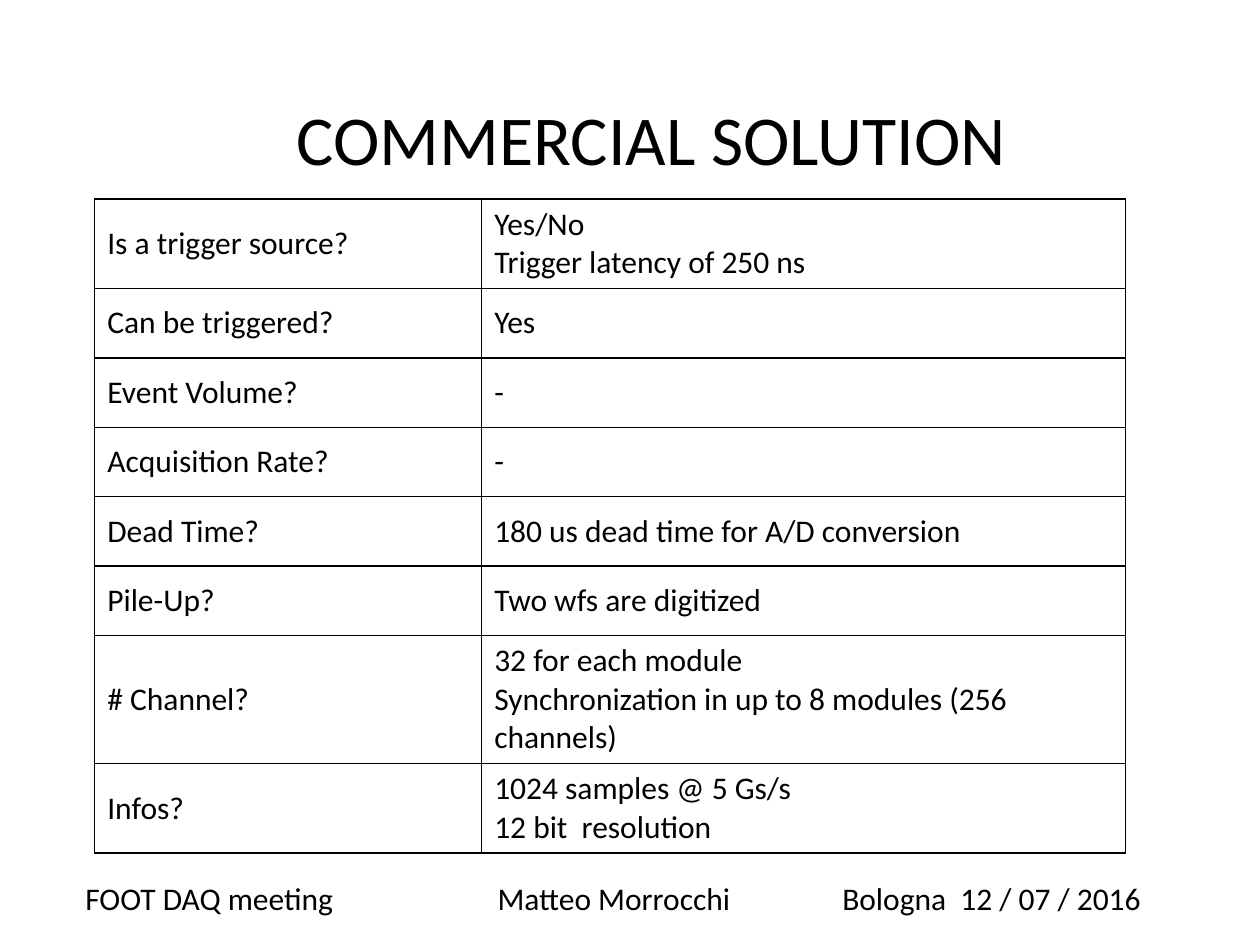
from lxml import etree
from pptx import Presentation
from pptx import util as u
from pptx.dml.color import RGBColor
from pptx.enum import text
from pptx.oxml import ns

TITLE = "COMMERCIAL SOLUTION"
ROWS = [
    ("Is a trigger source?", ["Yes/No", "Trigger latency of 250 ns"]),
    ("Can be triggered?", ["Yes"]),
    ("Event Volume?", ["-"]),
    ("Acquisition Rate?", ["-"]),
    ("Dead Time?", ["180 us dead time for A/D conversion"]),
    ("Pile-Up?", ["Two wfs are digitized"]),
    ("# Channel?", ["32 for each module",
                    "Synchronization in up to 8 modules (256 channels)"]),
    ("Infos?", ["1024 samples @ 5 Gs/s", "12 bit  resolution"]),
]
FOOTER = ["FOOT DAQ meeting", "Matteo Morrocchi", "Bologna  12 / 07 / 2016"]
FOOTER_TABS = [8.31, 15.26]
COLUMNS = [7.8, 12.98]
ROW_HEIGHT = 1.4
BLACK = RGBColor(0, 0, 0)


def write(tf, lines, size=18, align=text.PP_ALIGN.LEFT):
    tf.word_wrap = True
    tf.text = "\n".join(lines)
    for p in tf.paragraphs:
        p.alignment = align
        p.font.name = "Calibri"
        p.font.size = u.Pt(size)
        p.font.color.rgb = BLACK


def add_text(s, box, lines, **style):
    tf = s.shapes.add_textbox(*map(u.Cm, box)).text_frame
    write(tf, lines, **style)
    return tf


def set_borders(cell):
    tc_pr = cell._tc.get_or_add_tcPr()
    for i, side in enumerate(("lnL", "lnR", "lnT", "lnB")):
        ln = etree.Element(ns.qn("a:" + side), w=str(u.Pt(1)))
        fill = etree.SubElement(ln, ns.qn("a:solidFill"))
        etree.SubElement(fill, ns.qn("a:srgbClr"), val=str(BLACK))
        tc_pr.insert(i, ln)


def set_tabs(p, stops):
    tabs = etree.Element(ns.qn("a:tabLst"))
    for stop in stops:
        etree.SubElement(tabs, ns.qn("a:tab"), pos=str(u.Cm(stop)), algn="l")
    p._p.get_or_add_pPr().insert(0, tabs)


def add_answers(s):
    table = s.shapes.add_table(
        len(ROWS), len(COLUMNS), u.Cm(1.91), u.Cm(4.01),
        u.Cm(sum(COLUMNS)), u.Cm(ROW_HEIGHT * len(ROWS))).table
    table.first_row = table.horz_banding = False
    for column, width in zip(table.columns, COLUMNS):
        column.width = u.Cm(width)
    for r, (question, answers) in enumerate(ROWS):
        for c, lines in enumerate(([question], answers)):
            cell = table.cell(r, c)
            write(cell.text_frame, lines)
            cell.vertical_anchor = text.MSO_ANCHOR.MIDDLE
            cell.fill.background()
            set_borders(cell)


def main():
    prs = Presentation()
    prs.slide_width, prs.slide_height = u.Cm(25.4), u.Cm(19.05)
    s = prs.slides.add_slide(prs.slide_layouts[6])
    add_answers(s)
    footer = add_text(s, (1.47, 17.6, 22.02, 1.02), ["\t".join(FOOTER)])
    set_tabs(footer.paragraphs[0], FOOTER_TABS)
    title = add_text(s, (1.7, 1.19, 22.86, 3.18), [TITLE], size=40,
                     align=text.PP_ALIGN.CENTER)
    title.vertical_anchor = text.MSO_ANCHOR.MIDDLE
    prs.save("out.pptx")


if __name__ == "__main__":
    main()
